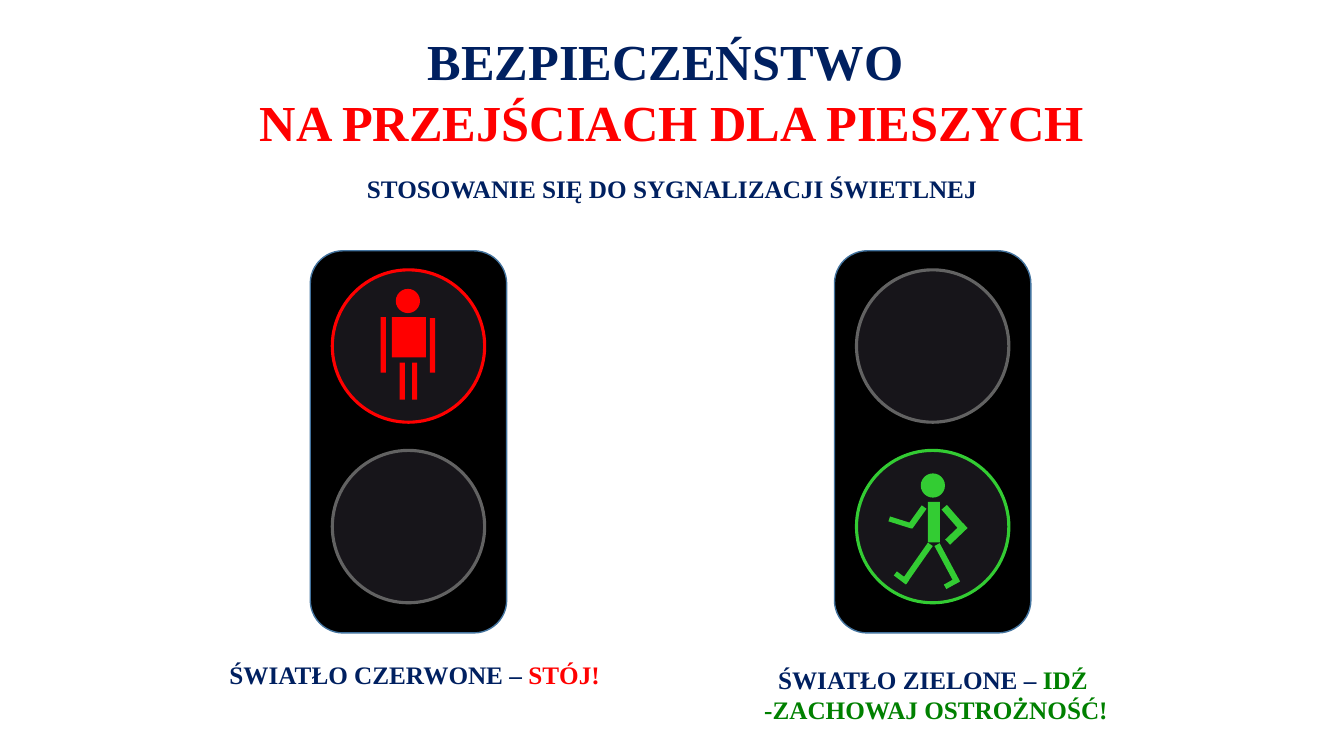
from dataclasses import dataclass

from pptx import Presentation
from pptx.dml.color import RGBColor
from pptx.enum.shapes import MSO_SHAPE as Preset
from pptx.enum.text import MSO_AUTO_SIZE as AutoSize, PP_ALIGN as Align
from pptx.shapes.autoshape import Shape
from pptx.slide import Slide
from pptx.util import Cm, Pt


@dataclass(frozen=True)
class Theme:
    font: str = "Times New Roman"
    title_size: float = 36
    text_size: float = 18
    navy: str = "002060"
    red: str = "FF0000"
    green_text: str = "008000"
    green_light: str = "33CC33"
    housing: str = "000000"
    housing_edge: str = "43739E"
    lens: str = "17151A"
    unlit: str = "626262"
    housing_line: float = 1
    lens_line: float = 2.25


@dataclass(frozen=True)
class Caption:
    """A centred text; each line is a list of (words, colour)."""
    left: float
    top: float
    width: float
    height: float
    size: float
    lines: list[list[tuple[str, str]]]


@dataclass(frozen=True)
class BodyPart:
    """A piece of a figure, measured from the top left of its lamp."""
    left: float
    top: float
    width: float
    height: float
    rotation: float = 0
    preset: Preset = Preset.RECTANGLE


@dataclass(frozen=True)
class Lamp:
    ring: str
    figure: tuple[BodyPart, ...] = ()


@dataclass(frozen=True)
class Signal:
    left: float
    lamps: tuple[Lamp, Lamp]


THEME = Theme()
SLIDE_WIDTH, SLIDE_HEIGHT = 33.87, 19.05
SIGNAL_TOP, SIGNAL_WIDTH, SIGNAL_HEIGHT = 6.32, 4.95, 9.63
LAMP_SIZE, LAMP_MARGIN_TOP, LAMP_STEP = 3.84, 0.48, 4.55

STANDING = (
    BodyPart(1.6, 0.48, 0.61, 0.61, preset=Preset.OVAL),
    BodyPart(1.5, 1.19, 0.86, 1.02),
    BodyPart(1.22, 1.19, 0.13, 1.4),
    BodyPart(2.46, 1.22, 0.13, 1.37),
    BodyPart(1.7, 2.34, 0.13, 0.93),
    BodyPart(2.01, 2.34, 0.13, 0.93),
)
WALKING = (
    BodyPart(1.62, 0.58, 0.61, 0.61, preset=Preset.OVAL),
    BodyPart(1.8, 1.3, 0.3, 1.02),
    BodyPart(2.21, 2.31, 0.15, 1.09, 151.9),
    BodyPart(1.45, 2.26, 0.15, 1.17, 215),
    BodyPart(2.21, 3.28, 0.38, 0.13, 330.9),
    BodyPart(0.94, 3.15, 0.38, 0.13, 36.7),
    BodyPart(2.08, 1.63, 0.76, 0.18, 48.9),
    BodyPart(2.21, 2.01, 0.61, 0.18, 136.4),
    BodyPart(1.22, 1.6, 0.61, 0.15, 125.7),
    BodyPart(0.81, 1.75, 0.61, 0.13, 197.5),
)
SIGNALS = (
    Signal(7.82, (Lamp(THEME.red, STANDING), Lamp(THEME.unlit))),
    Signal(21.03, (Lamp(THEME.unlit), Lamp(THEME.green_light, WALKING))),
)
CAPTIONS = (
    Caption(0, 0.64, SLIDE_WIDTH, 3.33, THEME.title_size, [
        [("BEZPIECZEŃSTWO ", THEME.navy)],
        [("NA PRZEJŚCIACH DLA PIESZYCH", THEME.red)],
    ]),
    Caption(0, 4.24, SLIDE_WIDTH, 1.02, THEME.text_size, [
        [("STOSOWANIE SIĘ DO SYGNALIZACJI ŚWIETLNEJ", THEME.navy)],
    ]),
    Caption(5.18, 16.48, 10.54, 1.02, THEME.text_size, [
        [("ŚWIATŁO CZERWONE – ", THEME.navy), ("STÓJ!", THEME.red)],
    ]),
    Caption(18.24, 16.61, 10.54, 1.8, THEME.text_size, [
        [("ŚWIATŁO ZIELONE – ", THEME.navy), ("IDŹ", THEME.green_text)],
        [(" -ZACHOWAJ OSTROŻNOŚĆ!", THEME.green_text)],
    ]),
)


def add_caption(slide: Slide, caption: Caption) -> None:
    box = slide.shapes.add_textbox(
        Cm(caption.left), Cm(caption.top), Cm(caption.width), Cm(caption.height))
    frame = box.text_frame
    frame.word_wrap = True
    frame.auto_size = AutoSize.SHAPE_TO_FIT_TEXT
    paragraph = frame.paragraphs[0]
    paragraph.alignment = Align.CENTER
    font_format = {"name": THEME.font, "size": Pt(caption.size), "bold": True}
    for index, line in enumerate(caption.lines):
        if index:
            paragraph.add_line_break()
        for words, colour in line:
            run = paragraph.add_run()
            run.text = words
            for attribute, value in font_format.items():
                setattr(run.font, attribute, value)
            run.font.color.rgb = RGBColor.from_string(colour)


def add_filled(slide: Slide, preset: Preset, left: float, top: float,
               width: float, height: float, fill: str) -> Shape:
    """Add a preset shape with a solid fill and neither outline nor shadow."""
    shape = slide.shapes.add_shape(preset, Cm(left), Cm(top), Cm(width), Cm(height))
    shape.shadow.inherit = False
    shape.fill.solid()
    shape.fill.fore_color.rgb = RGBColor.from_string(fill)
    shape.line.fill.background()
    return shape


def outline(shape: Shape, colour: str, width: float) -> None:
    shape.line.color.rgb = RGBColor.from_string(colour)
    shape.line.width = Pt(width)


def add_signal(slide: Slide, signal: Signal) -> None:
    housing = add_filled(slide, Preset.ROUNDED_RECTANGLE, signal.left, SIGNAL_TOP,
                         SIGNAL_WIDTH, SIGNAL_HEIGHT, THEME.housing)
    outline(housing, THEME.housing_edge, THEME.housing_line)
    lamp_left = signal.left + (SIGNAL_WIDTH - LAMP_SIZE) / 2
    for index, lamp in enumerate(signal.lamps):
        lamp_top = SIGNAL_TOP + LAMP_MARGIN_TOP + index * LAMP_STEP
        lens = add_filled(slide, Preset.OVAL, lamp_left, lamp_top,
                          LAMP_SIZE, LAMP_SIZE, THEME.lens)
        outline(lens, lamp.ring, THEME.lens_line)
        for part in lamp.figure:
            limb = add_filled(slide, part.preset, lamp_left + part.left,
                              lamp_top + part.top, part.width, part.height, lamp.ring)
            limb.rotation = part.rotation


def main() -> None:
    presentation = Presentation()
    presentation.slide_width = Cm(SLIDE_WIDTH)
    presentation.slide_height = Cm(SLIDE_HEIGHT)
    slide = presentation.slides.add_slide(presentation.slide_layouts[6])
    for caption in CAPTIONS:
        add_caption(slide, caption)
    for signal in SIGNALS:
        add_signal(slide, signal)
    presentation.save("out.pptx")


if __name__ == "__main__":
    main()
